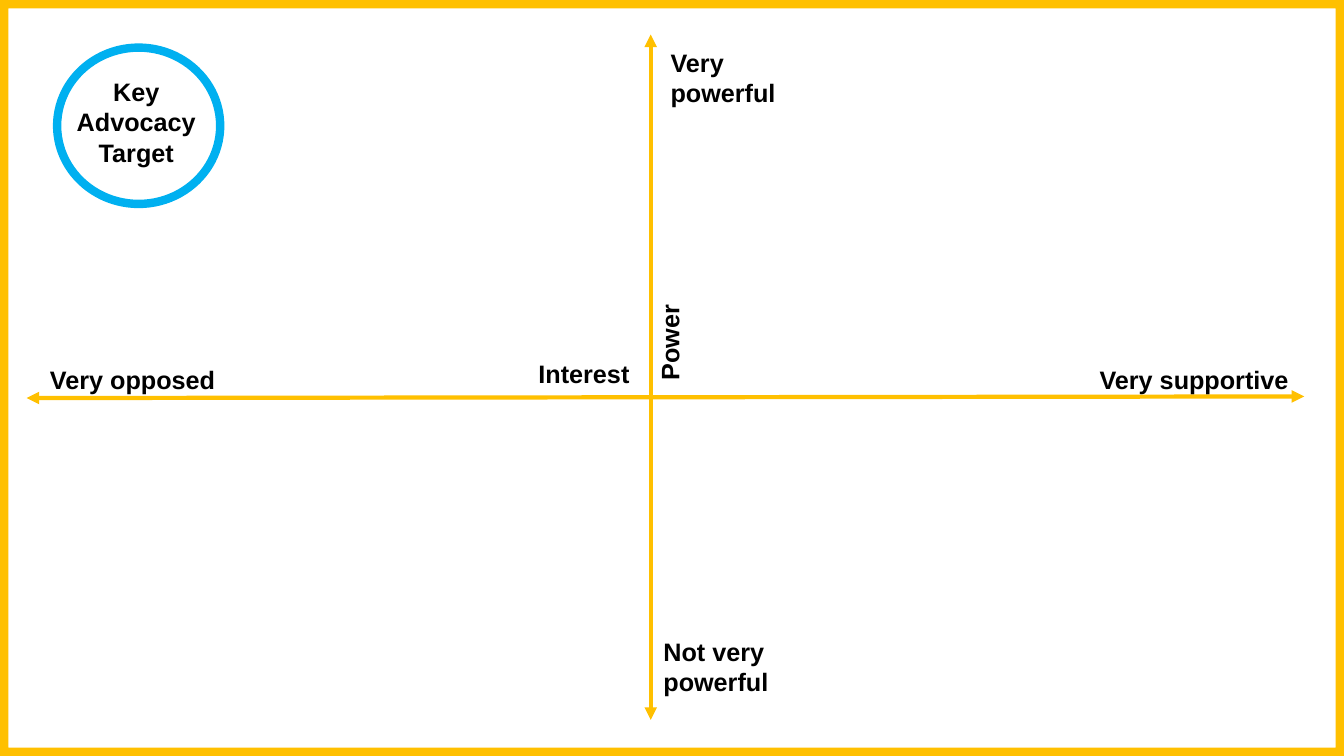
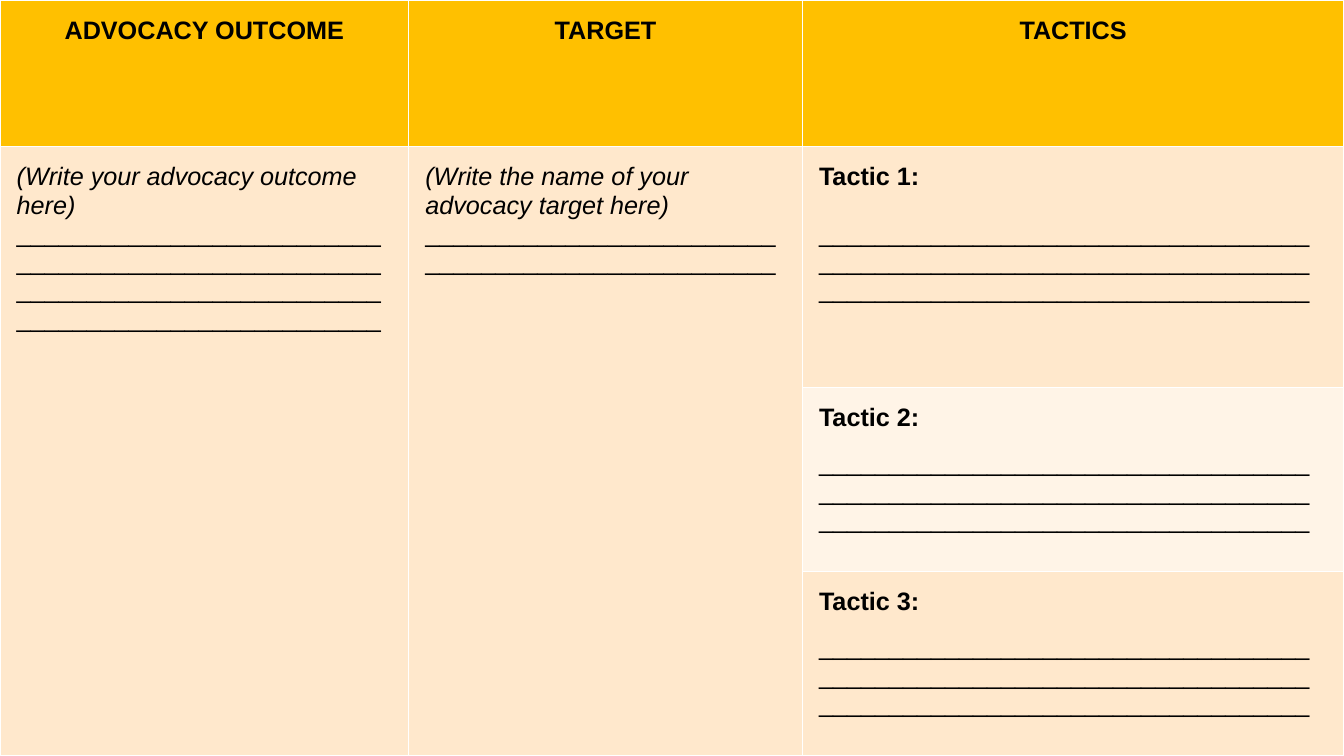
"""Build two advocacy planning slides: a power and interest map and a tactics table."""
import pptx
import pptx.util
import pptx.dml.color
import pptx.enum.shapes
import pptx.enum.text
import pptx.oxml.ns
import lxml.etree

Cm, Pt = pptx.util.Cm, pptx.util.Pt
SHAPE = pptx.enum.shapes.MSO_SHAPE
ALIGN = pptx.enum.text.PP_ALIGN
qn = pptx.oxml.ns.qn

COLORS = {"gold": "FFC000", "blue": "00B0F0", "peach": "FFE8CC",
          "cream": "FFF4E7", "white": "FFFFFF", "black": "000000"}
FONT, SIZE = "Arial", 18
WIDTH, HEIGHT = 33.87, 19.05

AXES = [(16.4, 0.87, 16.4, 18.14), (32.87, 9.99, 0.67, 10.03)]
LABELS = [
    ("Very powerful", 16.65, 1.07, 4.24, 1.8, 0),
    ("Not very powerful", 16.47, 15.9, 4.04, 1.8, 0),
    ("Very opposed", 1.01, 9.06, 5.18, 1.02, 0),
    ("Very supportive", 27.46, 9.06, 6.3, 1.02, 0),
    ("Interest", 13.32, 8.91, 5.18, 1.02, 0),
    ("Power", 14.28, 6.73, 5.18, 1.02, 270),
]
TARGET = "Key Advocacy Target"

COLUMNS = [10.3, 9.92, 13.65]
ROWS = [3.69, 6.07, 4.64, 4.65]
HEADERS = ["ADVOCACY OUTCOME", "TARGET", "TACTICS"]
PROMPTS = [("(Write your advocacy outcome here)", 104),
           ("(Write the name of your advocacy target here)", 50)]
TACTICS = [("Tactic 1:", 20, "peach"), ("Tactic 2:", 12, "cream"), ("Tactic 3:", 12, "peach")]
TACTIC_BLANKS = 105
CELL_INSET, TACTIC_RIGHT_INSET, TARGET_INSET = 0.42, 0.6, 0.33


def rgb(name):
    return pptx.dml.color.RGBColor.from_string(COLORS[name])


def write(tf, text, bold=True, italic=False, align=ALIGN.LEFT, after=0, inset=None):
    """Fill the first empty paragraph, or add one, with formatted text."""
    tf.word_wrap = True
    if inset is not None:
        tf.margin_left = tf.margin_right = tf.margin_top = tf.margin_bottom = Cm(inset)
    p = tf.paragraphs[0] if not tf.text else tf.add_paragraph()
    p.alignment, p.space_after = align, Pt(after)
    r = p.add_run()
    r.text = text
    r.font.name, r.font.size = FONT, Pt(SIZE)
    r.font.bold, r.font.italic = bold, italic
    r.font.color.rgb = rgb("black")


def add_box(s, text, x, y, w, h, **style):
    sp = s.shapes.add_textbox(Cm(x), Cm(y), Cm(w), Cm(h))
    write(sp.text_frame, text, **style)
    return sp


def add_shape(s, kind, x, y, w, h):
    sp = s.shapes.add_shape(kind, Cm(x), Cm(y), Cm(w), Cm(h))
    sp.shadow.inherit = False
    return sp


def add_axis(s, x1, y1, x2, y2):
    line = s.shapes.add_connector(pptx.enum.shapes.MSO_CONNECTOR.STRAIGHT,
                                  Cm(x1), Cm(y1), Cm(x2), Cm(y2))
    line.line.color.rgb, line.line.width = rgb("gold"), Pt(3)
    ln = line.line._get_or_add_ln()
    for end in ("a:headEnd", "a:tailEnd"):
        lxml.etree.SubElement(ln, qn(end), type="triangle")
    lxml.etree.SubElement(line._element.spPr, qn("a:effectLst"))


def style_cell(cell, color, right=CELL_INSET):
    tcPr = cell._tc.get_or_add_tcPr()
    for side in "LRTB":
        ln = lxml.etree.SubElement(tcPr, qn(f"a:ln{side}"), w=str(Pt(1)))
        fill = lxml.etree.SubElement(ln, qn("a:solidFill"))
        lxml.etree.SubElement(fill, qn("a:srgbClr"), val=COLORS["white"])
    cell.fill.solid()
    cell.fill.fore_color.rgb = rgb(color)
    cell.margin_left = cell.margin_top = cell.margin_bottom = Cm(CELL_INSET)
    cell.margin_right = Cm(right)


def build_map(s):
    for axis in AXES:
        add_axis(s, *axis)
    for text, x, y, w, h, rotation in LABELS:
        add_box(s, text, x, y, w, h).rotation = rotation
    frame = add_shape(s, SHAPE.FRAME, 0, 0, WIDTH, HEIGHT)
    frame.adjustments[0] = 0.011
    frame.fill.solid()
    frame.fill.fore_color.rgb = rgb("gold")
    frame.line.fill.background()
    circle = add_shape(s, SHAPE.OVAL, 1.44, 1.2, 4.11, 3.94)
    circle.fill.background()
    circle.line.color.rgb, circle.line.width = rgb("blue"), Pt(6)
    add_box(s, TARGET, 1.44, 1.6, 3.99, 3, align=ALIGN.CENTER, inset=TARGET_INSET)


def build_table(s):
    table = s.shapes.add_table(len(ROWS), len(COLUMNS), 0, 0, Cm(WIDTH), Cm(HEIGHT)).table
    for column, width in zip(table.columns, COLUMNS):
        column.width = Cm(width)
    for row, height in zip(table.rows, ROWS):
        row.height = Cm(height)
    for c, text in enumerate(HEADERS):
        style_cell(table.cell(0, c), "gold")
        write(table.cell(0, c).text_frame, text, align=ALIGN.CENTER)
    for c, (text, blanks) in enumerate(PROMPTS):
        for r in range(1, len(ROWS)):
            style_cell(table.cell(r, c), "peach")
        table.cell(1, c).merge(table.cell(len(ROWS) - 1, c))
        tf = table.cell(1, c).text_frame
        write(tf, text, bold=False, italic=True)
        write(tf, "_" * blanks, bold=False)
    for r, (text, after, color) in enumerate(TACTICS, 1):
        cell = table.cell(r, len(COLUMNS) - 1)
        style_cell(cell, color, right=TACTIC_RIGHT_INSET)
        write(cell.text_frame, text, after=after)
        write(cell.text_frame, "_" * TACTIC_BLANKS, bold=False)


def main():
    prs = pptx.Presentation()
    prs.slide_width, prs.slide_height = Cm(WIDTH), Cm(HEIGHT)
    for build in (build_map, build_table):
        build(prs.slides.add_slide(prs.slide_layouts[6]))
    prs.save("out.pptx")


if __name__ == "__main__":
    main()
